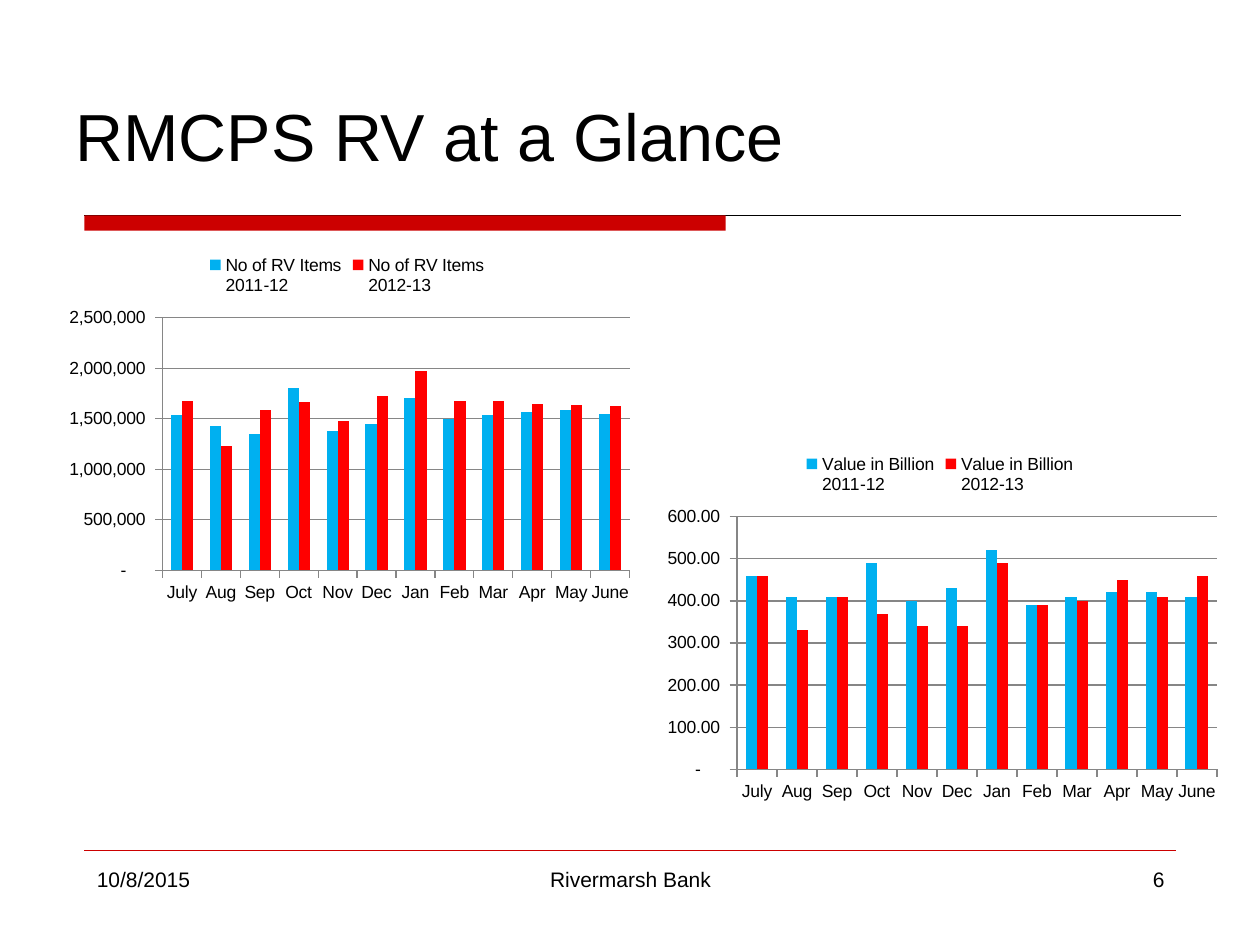
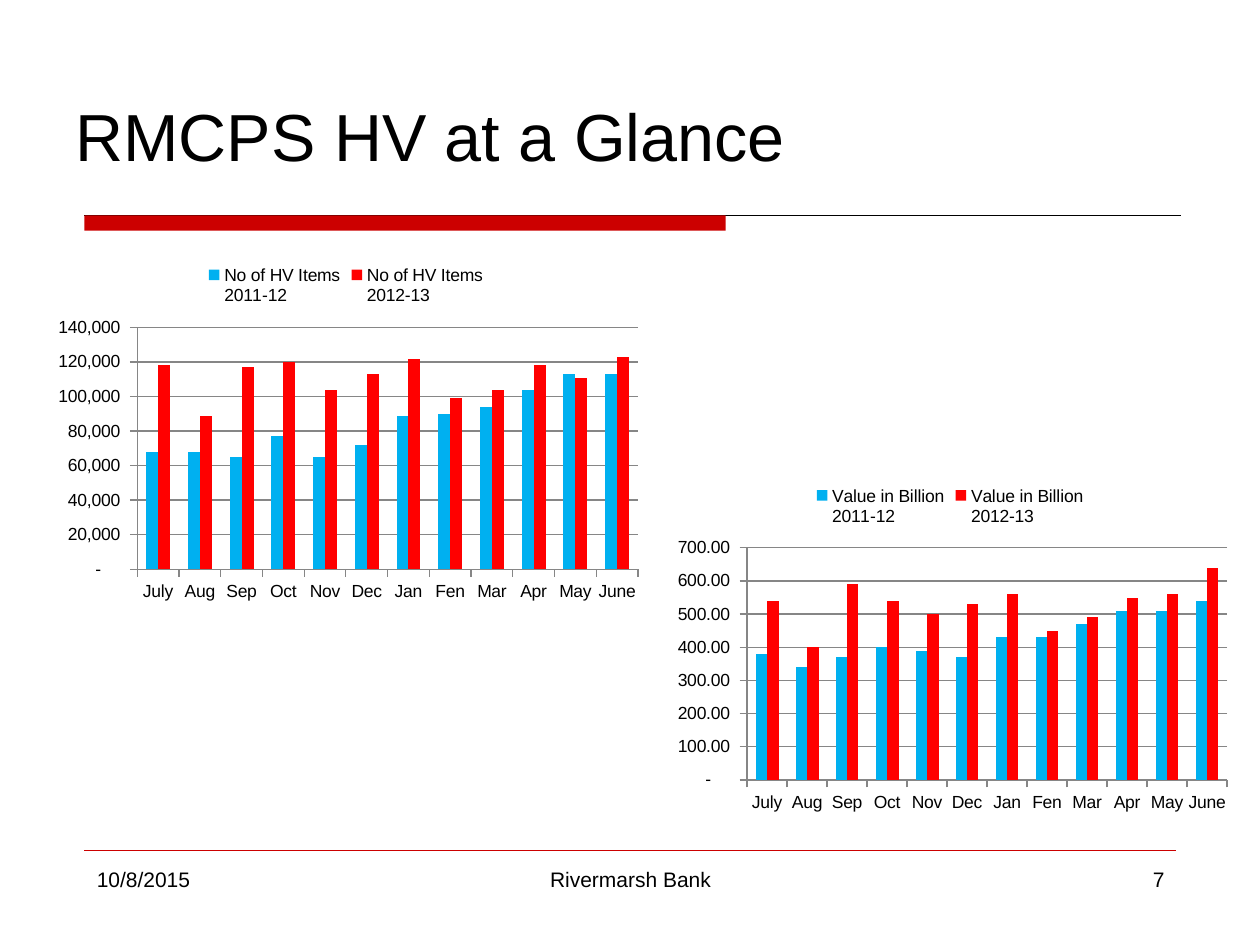
"""Build two slides comparing monthly RV and HV cheque clearing across two years."""
import lxml.etree
import pptx
import pptx.chart.data
import pptx.dml.color
import pptx.enum.chart
import pptx.enum.shapes
import pptx.enum.text
import pptx.oxml.ns
import pptx.util

Inches = pptx.util.Inches
Pt = pptx.util.Pt
Align = pptx.enum.text.PP_ALIGN
Anchor = pptx.enum.text.MSO_ANCHOR

FONT = "Arial"
HEX = {"text": "000000", "band": "CC0000", "grid": "868686",
       "2011-12": "00B0F0", "2012-13": "FF0000"}
COLOURS = {name: pptx.dml.color.RGBColor.from_string(code) for name, code in HEX.items()}
COUNT_FORMAT = r'_(* #,##0_);_(* \(#,##0\);_(* "-"??_);_(@_)'
VALUE_FORMAT = r'_(* #,##0.00_);_(* \(#,##0.00\);_(* "-"??_);_(@_)'
MONTHS = ["July", "Aug", "Sep", "Oct", "Nov", "Dec",
          "Jan", "Feb", "Mar", "Apr", "May", "June"]
HV_MONTHS = ["Fen" if month == "Feb" else month for month in MONTHS]

SLIDES = [
    ("RMCPS RV at a Glance", "6", MONTHS, [
        ("No of RV Items", COUNT_FORMAT, (0.42, 1.92, 4.67, 2.92), {
            "2011-12": [1540000, 1430000, 1350000, 1800000, 1380000, 1450000,
                        1700000, 1500000, 1540000, 1570000, 1590000, 1550000],
            "2012-13": [1680000, 1230000, 1590000, 1670000, 1480000, 1720000,
                        1970000, 1680000, 1680000, 1650000, 1640000, 1630000]}),
        ("Value in Billion", VALUE_FORMAT, (5.17, 3.5, 4.58, 2.92), {
            "2011-12": [460, 410, 410, 490, 400, 430, 520, 390, 410, 420, 420, 410],
            "2012-13": [460, 330, 410, 370, 340, 340, 490, 390, 400, 450, 410, 460]}),
    ]),
    ("RMCPS HV at a Glance", "7", HV_MONTHS, [
        ("No of HV Items", COUNT_FORMAT, (0.33, 2, 4.83, 2.83), {
            "2011-12": [68000, 68000, 65000, 77000, 65000, 72000,
                        89000, 90000, 94000, 104000, 113000, 113000],
            "2012-13": [118000, 89000, 117000, 120000, 104000, 113000,
                        122000, 99000, 104000, 118000, 111000, 123000]}),
        ("Value in Billion", VALUE_FORMAT, (5.25, 3.75, 4.58, 2.75), {
            "2011-12": [380, 340, 370, 400, 390, 370, 430, 430, 470, 510, 510, 540],
            "2012-13": [540, 400, 590, 540, 500, 530, 560, 450, 490, 550, 560, 640]}),
    ]),
]


def add_text(page, text, place, size, align=Align.LEFT, anchor=Anchor.TOP):
    box = page.shapes.add_textbox(*map(Inches, place))
    frame = box.text_frame
    frame.word_wrap = True
    frame.vertical_anchor = anchor
    frame.text = text
    para = frame.paragraphs[0]
    para.alignment = align
    span = para.runs[0]
    span.font.name = FONT
    span.font.size = Pt(size)
    span.font.color.rgb = COLOURS["text"]


def add_rule(page, left, right, top, colour, width):
    rule = page.shapes.add_connector(
        pptx.enum.shapes.MSO_CONNECTOR.STRAIGHT,
        Inches(left), Inches(top), Inches(right), Inches(top))
    rule.line.color.rgb = COLOURS[colour]
    rule.line.width = Pt(width)
    lxml.etree.SubElement(rule._element.spPr, pptx.oxml.ns.qn("a:effectLst"))


deck = pptx.Presentation()
deck.slide_width = Inches(10)
deck.slide_height = Inches(7.5)

for title, number, months, charts in SLIDES:
    page = deck.slides.add_slide(deck.slide_layouts[6])

    add_rule(page, 0.67, 9.37, 1.71, "text", 0.75)
    band = page.shapes.add_shape(pptx.enum.shapes.MSO_SHAPE.RECTANGLE,
                                 Inches(0.67), Inches(1.71), Inches(5.09), Inches(0.12))
    band.shadow.inherit = False
    band.fill.solid()
    band.fill.fore_color.rgb = COLOURS["band"]
    band.line.fill.background()
    add_rule(page, 0.67, 9.33, 6.75, "band", 0.25)

    add_text(page, title, (0.5, 0.67, 9, 0.77), 38, anchor=Anchor.BOTTOM)
    add_text(page, "10/8/2015", (0.67, 6.83, 2.17, 0.52), 12)
    add_text(page, "Rivermarsh Bank", (3.42, 6.83, 3.17, 0.52), 12, Align.CENTER)
    add_text(page, number, (7.17, 6.83, 2.17, 0.52), 12, Align.RIGHT)

    for measure, number_format, place, years in charts:
        data = pptx.chart.data.CategoryChartData()
        data.categories = months
        for year, values in years.items():
            data.add_series(f"{measure}\n{year}", values)
        chart = page.shapes.add_chart(
            pptx.enum.chart.XL_CHART_TYPE.COLUMN_CLUSTERED,
            *map(Inches, place), data).chart
        chart.has_title = False
        chart.font.name = FONT
        chart.font.size = Pt(10)
        chart.font.color.rgb = COLOURS["text"]
        chart.has_legend = True
        chart.legend.position = pptx.enum.chart.XL_LEGEND_POSITION.TOP
        chart.legend.include_in_layout = False

        plot = chart.plots[0]
        plot.gap_width = 150
        plot.overlap = 0
        plot.vary_by_categories = False
        for series, year in zip(plot.series, years):
            series.format.fill.solid()
            series.format.fill.fore_color.rgb = COLOURS[year]
            series.invert_if_negative = False

        chart.value_axis.has_major_gridlines = True
        chart.value_axis.tick_labels.number_format = number_format
        chart.value_axis.tick_labels.number_format_is_linked = False
        for axis in (chart.category_axis, chart.value_axis):
            axis.major_tick_mark = pptx.enum.chart.XL_TICK_MARK.OUTSIDE
        for part in (chart.category_axis, chart.value_axis, chart.value_axis.major_gridlines):
            part.format.line.color.rgb = COLOURS["grid"]
            part.format.line.width = Pt(0.75)

deck.save("out.pptx")
